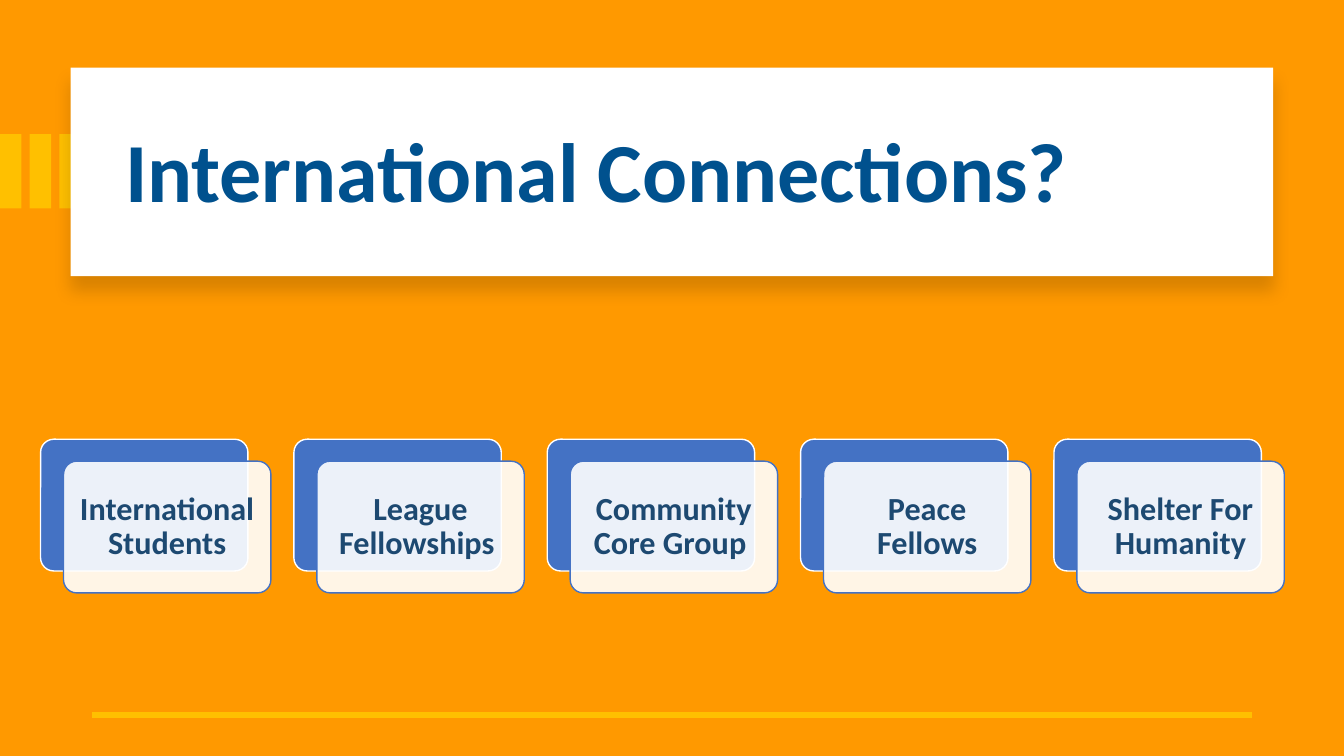
from dataclasses import dataclass

import lxml.etree
import pptx
import pptx.dml.color
import pptx.enum.shapes
import pptx.enum.text
import pptx.oxml
import pptx.oxml.ns
import pptx.shapes.autoshape
import pptx.slide
import pptx.util

SHAPE = pptx.enum.shapes.MSO_SHAPE
ALIGN = pptx.enum.text.PP_ALIGN
ANCHOR = pptx.enum.text.MSO_ANCHOR
qn = pptx.oxml.ns.qn

WIDTH = pptx.util.Inches(13.33)
HEIGHT = pptx.util.Inches(7.5)


@dataclass(frozen=True)
class Theme:
    background: str = "FF9900"
    accent: str = "FFC000"
    white: str = "FFFFFF"
    black: str = "000000"
    blue: str = "4472C4"
    title: str = "00518E"
    label: str = "1D4971"
    font: str = "Calibri"
    title_size: float = 60
    label_size: float = 23
    outline: float = 1
    rule: float = 4.5
    line_spacing: float = 0.9


@dataclass(frozen=True)
class Box:
    left: float
    top: float
    width: float
    height: float

    def shifted(self, dx: float, dy: float = 0) -> "Box":
        return Box(self.left + dx, self.top + dy, self.width, self.height)

    def emu(self) -> tuple[int, int, int, int]:
        return across(self.left), down(self.top), across(self.width), down(self.height)


THEME = Theme()
BAR = Box(0, 17.73, 1.6, 9.82)
BAR_COUNT = 3
BAR_PITCH = 2.21
PANEL = Box(5.25, 8.95, 89.48, 27.6)
TITLE = Box(8.55, 11.87, 83.5, 22.67)
CARD = Box(3.02, 58.1, 15.43, 17.42)
CARD_PITCH = 18.85
FRONT_SHIFT = (1.71, 2.9)
LABELS = (
    "International Students",
    "League Fellowships ",
    "Community Core Group ",
    "Peace Fellows",
    "Shelter For Humanity",
)


def across(percent: float) -> int:
    return round(WIDTH * percent / 100)


def down(percent: float) -> int:
    return round(HEIGHT * percent / 100)


def rgb(color: str) -> pptx.dml.color.RGBColor:
    return pptx.dml.color.RGBColor.from_string(color)


def add_box(
    s: pptx.slide.Slide, kind: SHAPE, box: Box, fill: str, line: str | None = None
) -> pptx.shapes.autoshape.Shape:
    sp = s.shapes.add_shape(kind, *box.emu())
    sp.shadow.inherit = False
    sp.fill.solid()
    sp.fill.fore_color.rgb = rgb(fill)
    if line is None:
        sp.line.fill.background()
    else:
        sp.line.color.rgb = rgb(line)
        sp.line.width = pptx.util.Pt(THEME.outline)
    if kind == SHAPE.ROUNDED_RECTANGLE:
        sp.adjustments[0] = 0.1
    return sp


def set_alpha(color: lxml.etree._Element, percent: int) -> None:
    lxml.etree.SubElement(color, qn("a:alpha"), val=str(percent * 1000))


def add_shadow(sp: pptx.shapes.autoshape.Shape) -> None:
    effects = sp._element.spPr.find(qn("a:effectLst"))
    shadow = lxml.etree.SubElement(
        effects, qn("a:outerShdw"),
        blurRad=str(pptx.util.Pt(11)), dist=str(pptx.util.Pt(10)),
        dir=str(90 * 60000), algn="t", rotWithShape="0",
    )
    color = lxml.etree.SubElement(shadow, qn("a:srgbClr"), val=THEME.black)
    set_alpha(color, 15)


def write(
    sp: pptx.shapes.autoshape.Shape, text: str, size: float, color: str, align: ALIGN
) -> None:
    tf = sp.text_frame
    tf.word_wrap = True
    tf.auto_size = pptx.enum.text.MSO_AUTO_SIZE.NONE
    tf.vertical_anchor = ANCHOR.MIDDLE
    p = tf.paragraphs[0]
    p.text = text
    p.alignment = align
    p.line_spacing = THEME.line_spacing
    p.font.name = THEME.font
    p.font.size = pptx.util.Pt(size)
    p.font.bold = True
    p.font.color.rgb = rgb(color)


def add_header(s: pptx.slide.Slide) -> None:
    for i in range(BAR_COUNT):
        add_box(s, SHAPE.RECTANGLE, BAR.shifted(i * BAR_PITCH), THEME.accent)
    add_shadow(add_box(s, SHAPE.RECTANGLE, PANEL, THEME.white))
    title = s.shapes.title
    title.left, title.top, title.width, title.height = TITLE.emu()
    write(title, "International Connections?", THEME.title_size, THEME.title, ALIGN.LEFT)
    s.shapes._spTree.append(title._element)


def add_rule(s: pptx.slide.Slide) -> None:
    y = down(94.55)
    cxn = s.shapes.add_connector(
        pptx.enum.shapes.MSO_CONNECTOR.STRAIGHT, across(93.15), y, across(6.86), y
    )
    cxn.line.color.rgb = rgb(THEME.accent)
    cxn.line.width = pptx.util.Pt(THEME.rule)
    lxml.etree.SubElement(cxn._element.spPr, qn("a:effectLst"))


def add_card(s: pptx.slide.Slide, box: Box, label: str) -> None:
    add_box(s, SHAPE.ROUNDED_RECTANGLE, box, THEME.blue, THEME.white)
    front = add_box(
        s, SHAPE.ROUNDED_RECTANGLE, box.shifted(*FRONT_SHIFT), THEME.white, THEME.blue
    )
    set_alpha(front._element.spPr.find(qn("a:solidFill"))[0], 90)
    tf = front.text_frame
    tf.margin_left = tf.margin_right = across(0.75)
    tf.margin_top = tf.margin_bottom = down(1.33)
    write(front, label, THEME.label_size, THEME.label, ALIGN.CENTER)


def main() -> None:
    prs = pptx.Presentation()
    prs.slide_width, prs.slide_height = WIDTH, HEIGHT
    s = prs.slides.add_slide(prs.slide_layouts[5])
    s.background.fill.solid()
    s.background.fill.fore_color.rgb = rgb(THEME.background)
    add_header(s)
    add_rule(s)
    for i, label in enumerate(LABELS):
        add_card(s, CARD.shifted(i * CARD_PITCH), label)
    prs.save("out.pptx")


if __name__ == "__main__":
    main()
